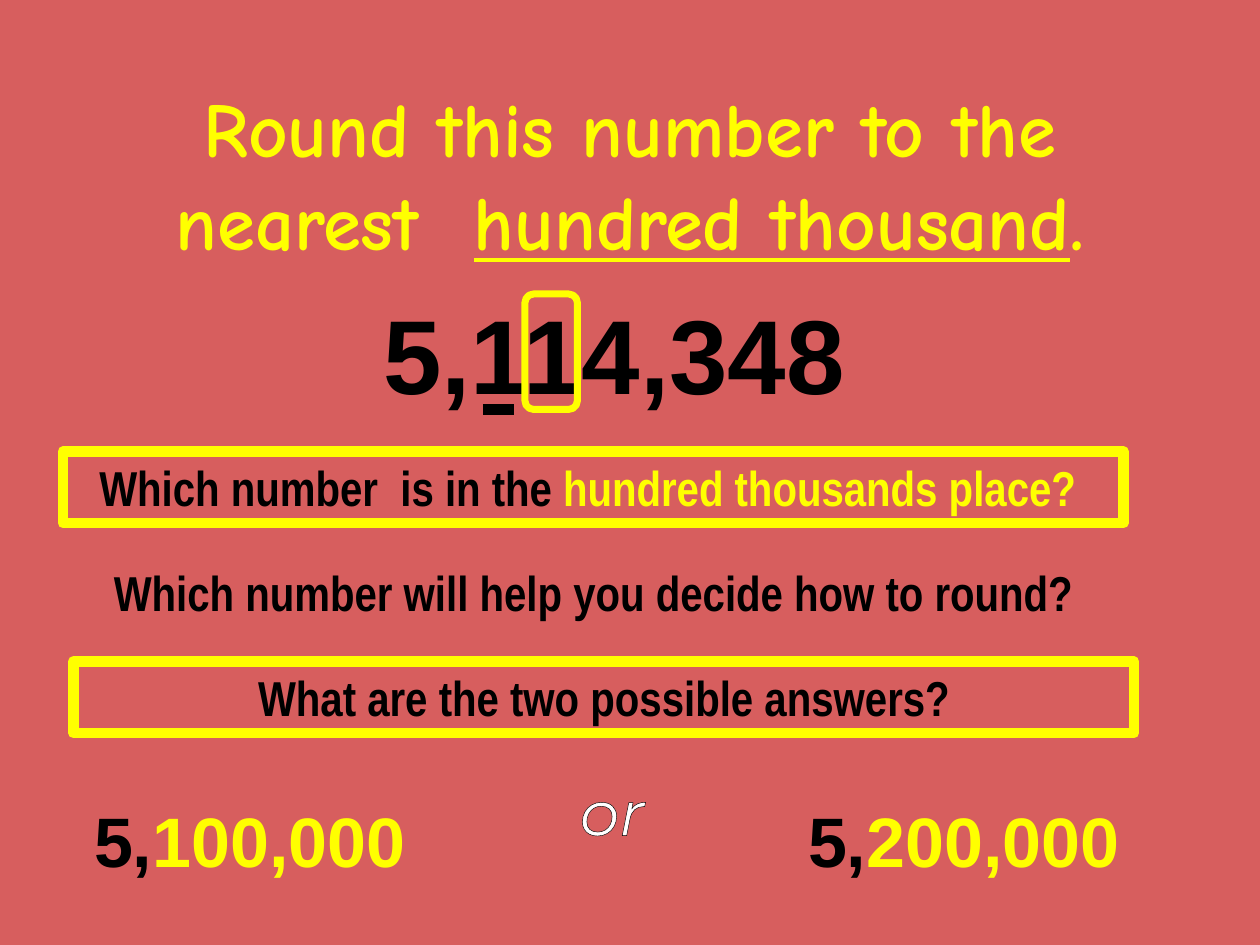
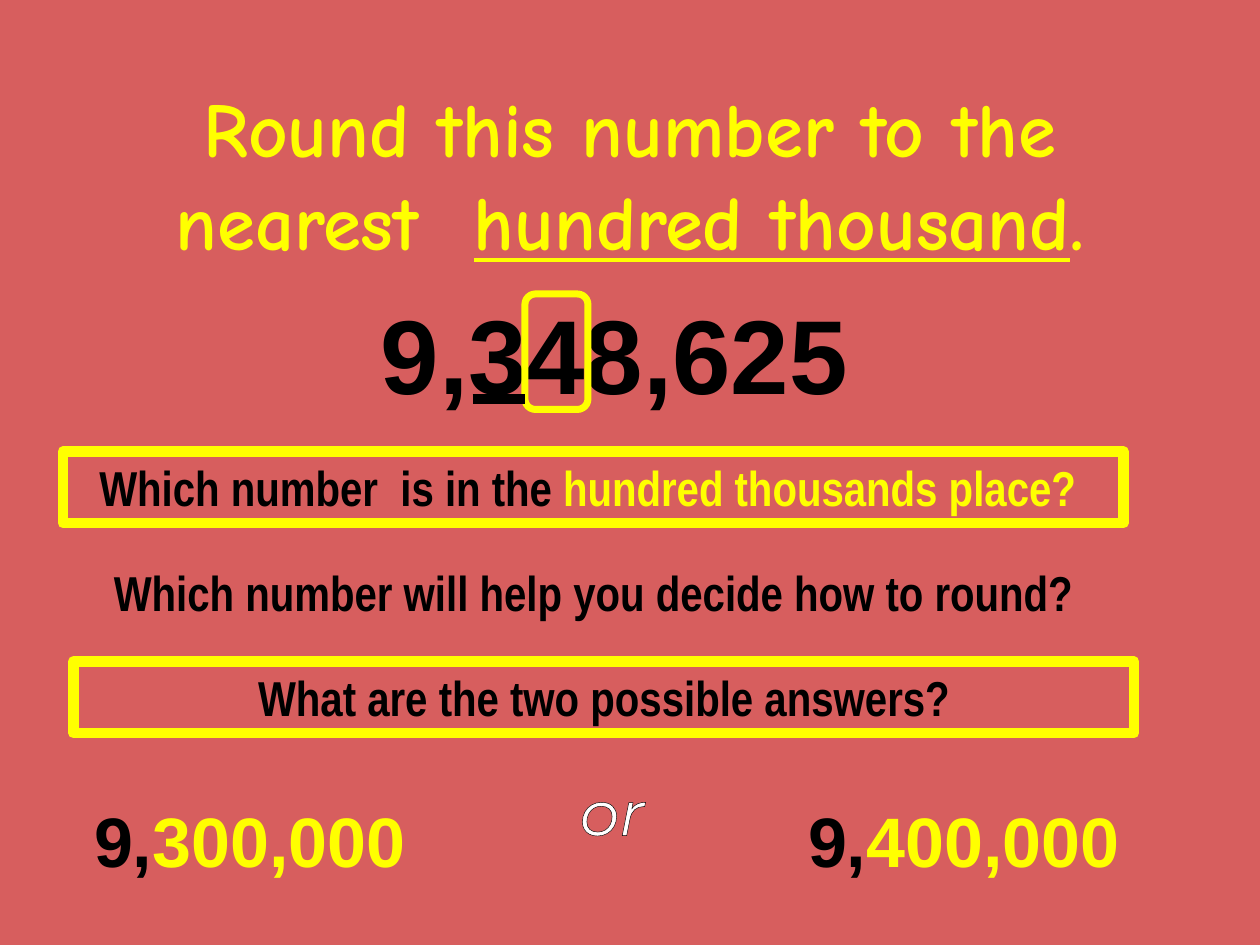
import pptx
import pptx.util
import pptx.dml.color
import pptx.enum.shapes
import pptx.enum.text
import pptx.oxml
import pptx.oxml.ns
import lxml.etree
from dataclasses import dataclass

Pt = pptx.util.Pt
Shapes = pptx.enum.shapes.MSO_SHAPE
Align = pptx.enum.text.PP_ALIGN
Anchor = pptx.enum.text.MSO_ANCHOR
AutoSize = pptx.enum.text.MSO_AUTO_SIZE

PROBLEMS = [
    {"number": "5,114,348", "millions": "5,", "answers": ("100,000", "200,000"),
     "frame_width": 30, "underline": (276, 294, 234)},
    {"number": "9,348,625", "millions": "9,", "answers": ("300,000", "400,000"),
     "frame_width": 36, "underline": (270, 300, 228)},
]
TITLE = [("Round this number to the nearest  ", {}),
         ("hundred thousand", {"underline": True}),
         (".", {})]
QUESTIONS = [
    {"left": 36, "framed": True,
     "pieces": [("Which number  is in the ", "ink"), ("hundred thousands place? ", "accent")]},
    {"left": 36, "framed": False,
     "pieces": [("Which number will help you decide how to round?", "ink")]},
    {"left": 42, "framed": True,
     "pieces": [("What are the two possible answers?", "ink")]},
]
QUESTION_TOP, QUESTION_STEP = 258, 60
ANSWER_LEFTS = (30, 438)


@dataclass(frozen=True)
class Theme:
    background: str = "D75E5E"
    accent: str = "FFFF00"
    ink: str = "000000"
    light: str = "FFFFFF"
    thick: int = 6
    medium: int = 4
    hairline: float = 0.75


THEME = Theme()
STYLES = {
    "title": {"name": "Comic Neue", "size": Pt(44), "bold": True},
    "number": {"name": "Arial", "size": Pt(60), "bold": True},
    "answer": {"name": "Arial", "size": Pt(40), "bold": True},
    "question": {"name": "Arial Narrow", "size": Pt(28), "bold": True},
    "or": {"name": "Montserrat", "size": Pt(36), "italic": True},
}


def rgb(color):
    return pptx.dml.color.RGBColor.from_string(getattr(THEME, color))


def set_attributes(target, values):
    for name, value in values.items():
        setattr(target, name, value)


def add_frame(slide, kind, box, weight):
    shape = slide.shapes.add_shape(kind, *map(Pt, box))
    shape.shadow.inherit = False
    shape.fill.background()
    shape.line.color.rgb = rgb("accent")
    shape.line.width = Pt(weight)
    return shape


def write(shape, pieces, alignment=Align.CENTER, **frame_values):
    values = {"word_wrap": True, "vertical_anchor": Anchor.TOP,
              "auto_size": AutoSize.SHAPE_TO_FIT_TEXT}
    set_attributes(shape.text_frame, {**values, **frame_values})
    paragraph = shape.text_frame.paragraphs[0]
    paragraph.alignment = alignment
    for text, style, color, extra in pieces:
        run = paragraph.add_run()
        run.text = text
        set_attributes(run.font, {**STYLES[style], **extra})
        run.font.color.rgb = rgb(color)
    return paragraph


def add_text(slide, box, pieces, **options):
    return write(slide.shapes.add_textbox(*map(Pt, box)), pieces, **options)


def outline_text(run):
    outline = pptx.oxml.parse_xml(
        f'<a:ln {pptx.oxml.ns.nsdecls("a")} w="{Pt(THEME.hairline)}"><a:solidFill>'
        f'<a:srgbClr val="{THEME.ink}"/></a:solidFill></a:ln>')
    run.font._element.insert(0, outline)


def add_question(slide, index, question):
    box = (question["left"], QUESTION_TOP + index * QUESTION_STEP, 606, 41)
    pieces = [(text, "question", color, {}) for text, color in question["pieces"]]
    if question["framed"]:
        write(add_frame(slide, Shapes.RECTANGLE, box, THEME.thick), pieces)
    else:
        add_text(slide, box, pieces)


def add_underline(slide, start, end, height):
    line = slide.shapes.add_connector(
        pptx.enum.shapes.MSO_CONNECTOR.STRAIGHT, Pt(start), Pt(height), Pt(end), Pt(height))
    line.line.color.rgb = rgb("ink")
    line.line.width = Pt(THEME.thick)
    lxml.etree.SubElement(line._element.spPr, pptx.oxml.ns.qn("a:effectLst"))


def build_slide(presentation, problem):
    slide = presentation.slides.add_slide(presentation.slide_layouts[6])
    slide.background.fill.solid()
    slide.background.fill.fore_color.rgb = rgb("background")

    add_text(slide, (36, 54, 648, 90),
             [(text, "title", "accent", extra) for text, extra in TITLE],
             vertical_anchor=Anchor.MIDDLE, auto_size=AutoSize.NONE)
    add_text(slide, (120, 162, 462, 80), [(problem["number"], "number", "ink", {})])
    separator = add_text(slide, (330, 438, 39.6, 51), [("or", "or", "light", {})],
                         word_wrap=False, auto_size=AutoSize.NONE)
    outline_text(separator.runs[0])

    for left, answer in zip(ANSWER_LEFTS, problem["answers"]):
        add_text(slide, (left, 432, 216, 80),
                 [(" ", "number", "ink", {}),
                  (problem["millions"], "answer", "ink", {}),
                  (answer, "answer", "accent", {}),
                  (" ", "number", "ink", {})],
                 alignment=Align.LEFT)
    for index, question in enumerate(QUESTIONS):
        add_question(slide, index, question)

    add_frame(slide, Shapes.ROUNDED_RECTANGLE,
              (300, 168, problem["frame_width"], 66), THEME.medium)
    add_underline(slide, *problem["underline"])


def main():
    presentation = pptx.Presentation()
    set_attributes(presentation, {"slide_width": Pt(720), "slide_height": Pt(540)})
    for problem in PROBLEMS:
        build_slide(presentation, problem)
    presentation.save("out.pptx")


if __name__ == "__main__":
    main()
